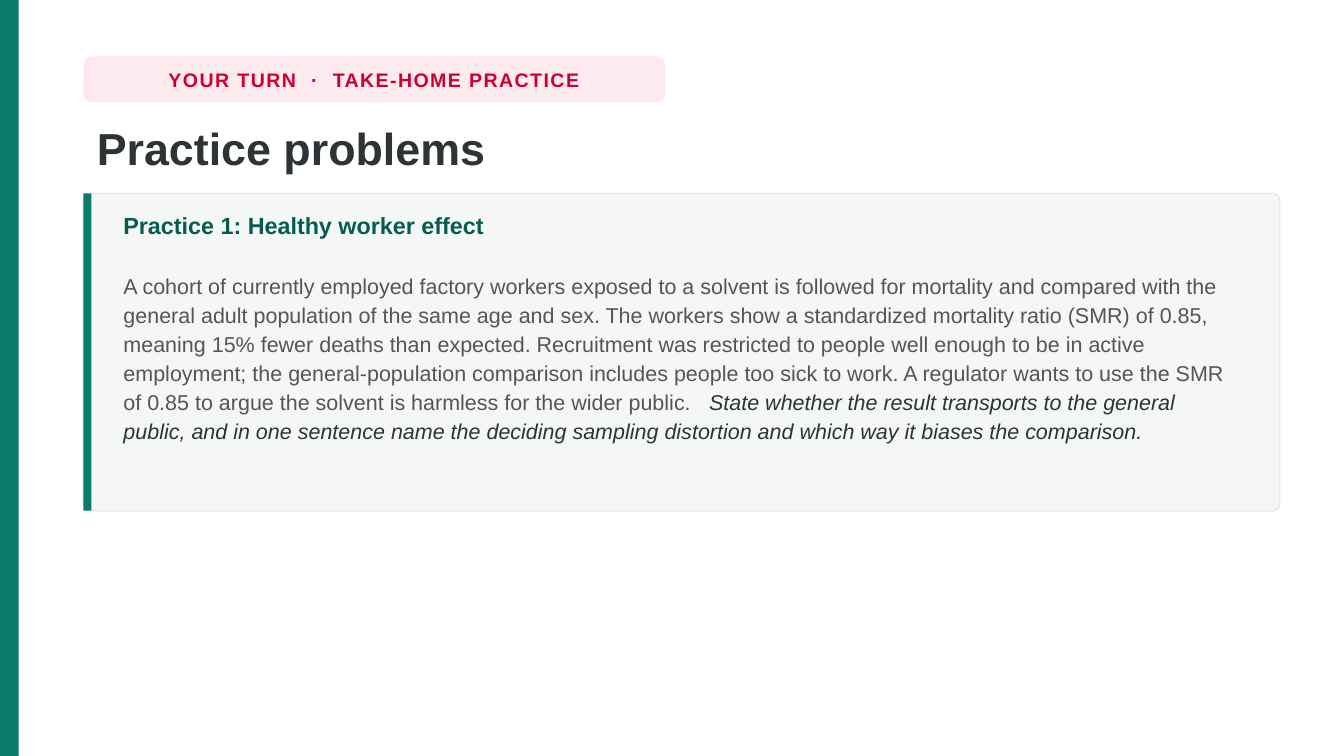
"""Build the practice problems slide with its take-home exercise card."""
from pptx import Presentation
from pptx.dml.color import RGBColor
from pptx.enum.shapes import MSO_SHAPE
from pptx.enum.text import MSO_ANCHOR, MSO_AUTO_SIZE, PP_ALIGN
from pptx.util import Inches, Pt

RECTANGLE = MSO_SHAPE.RECTANGLE
ROUNDED = MSO_SHAPE.ROUNDED_RECTANGLE
MIDDLE, TOP = MSO_ANCHOR.MIDDLE, MSO_ANCHOR.TOP
CENTER, LEFT = PP_ALIGN.CENTER, PP_ALIGN.LEFT
NO_AUTOFIT = MSO_AUTO_SIZE.NONE

GREEN = RGBColor(0x0B, 0x7B, 0x6B)
DARK_GREEN = RGBColor(0x06, 0x5C, 0x50)
RED = RGBColor(0xCC, 0x00, 0x33)
PINK = RGBColor(0xFD, 0xEA, 0xEF)
INK = RGBColor(0x2D, 0x34, 0x36)
GREY = RGBColor(0x55, 0x55, 0x55)
CARD_FILL = RGBColor(0xF4, 0xF7, 0xF6)
CARD_EDGE = RGBColor(0xE8, 0xEC, 0xEE)

SLIDE_WIDTH = Inches(10)
SLIDE_HEIGHT = SLIDE_WIDTH * 9 // 16
MARGIN, CONTENT_WIDTH = Inches(0.62), Inches(8.9)
CARD_TOP, CARD_HEIGHT = Inches(1.44), Inches(2.36)

SCENARIO = (
    "A cohort of currently employed factory workers exposed to a solvent is followed for "
    "mortality and compared with the general adult population of the same age and sex. "
    "The workers show a standardized mortality ratio (SMR) of 0.85, meaning 15% fewer "
    "deaths than expected. Recruitment was restricted to people well enough to be in active "
    "employment; the general-population comparison includes people too sick to work. "
    "A regulator wants to use the SMR of 0.85 to argue the solvent is harmless for the "
    "wider public.   "
)
TASK = (
    "State whether the result transports to the general public, and in one sentence name "
    "the deciding sampling distortion and which way it biases the comparison."
)


def add_panel(kind, left, top, width, height, color):
    panel = slide.shapes.add_shape(kind, left, top, width, height)
    panel.shadow.inherit = False
    panel.fill.solid()
    panel.fill.fore_color.rgb = color
    panel.line.fill.background()
    return panel


def add_run(paragraph, text, size, color, bold=False, italic=False):
    run = paragraph.add_run()
    run.text = text
    run.font.name = "Arial"
    run.font.size = Pt(size)
    run.font.bold = bold
    run.font.italic = italic
    run.font.color.rgb = color
    return run


deck = Presentation()
deck.slide_width, deck.slide_height = SLIDE_WIDTH, SLIDE_HEIGHT
slide = deck.slides.add_slide(deck.slide_layouts[5])

add_panel(RECTANGLE, 0, 0, Inches(0.14), SLIDE_HEIGHT, GREEN)

badge = add_panel(ROUNDED, MARGIN, Inches(0.42), Inches(4.33), Inches(0.34), PINK)
badge.adjustments[0] = 0.18
badge.text_frame.word_wrap = False
badge.text_frame.vertical_anchor = MIDDLE
badge_line = badge.text_frame.paragraphs[0]
badge_line.alignment = CENTER
badge_run = add_run(badge_line, "YOUR TURN  ·  TAKE-HOME PRACTICE", 10.5, RED, bold=True)
badge_run.font._element.set("spc", "80")

title = slide.shapes.title
title.left, title.top = MARGIN, Inches(0.84)
title.width, title.height = CONTENT_WIDTH, Inches(0.56)
title.text_frame.auto_size = NO_AUTOFIT
title.text_frame.word_wrap = True
title.text_frame.vertical_anchor = TOP
title_line = title.text_frame.paragraphs[0]
title_line.alignment = LEFT
title_line.line_spacing = 1.02
add_run(title_line, "Practice problems", 24, INK, bold=True)

card = add_panel(ROUNDED, MARGIN, CARD_TOP, CONTENT_WIDTH, CARD_HEIGHT, CARD_FILL)
card.adjustments[0] = 0.02
card.line.color.rgb = CARD_EDGE
card.line.width = Pt(1)
add_panel(RECTANGLE, MARGIN, CARD_TOP, Inches(0.06), CARD_HEIGHT, GREEN)

exercise = slide.shapes.add_textbox(
    Inches(0.82), Inches(1.52), Inches(8.48), Inches(2.2)
).text_frame
exercise.word_wrap = True
exercise.vertical_anchor = TOP
exercise.margin_top = Inches(0.03)
heading = exercise.paragraphs[0]
heading.line_spacing = 1.12
heading.space_after = Pt(16.5)
add_run(heading, "Practice 1: Healthy worker effect", 12.5, DARK_GREEN, bold=True)
question = exercise.add_paragraph()
question.line_spacing = 1.12
add_run(question, SCENARIO, 11.5, GREY)
add_run(question, TASK, 11.5, INK, italic=True)

deck.save("out.pptx")
